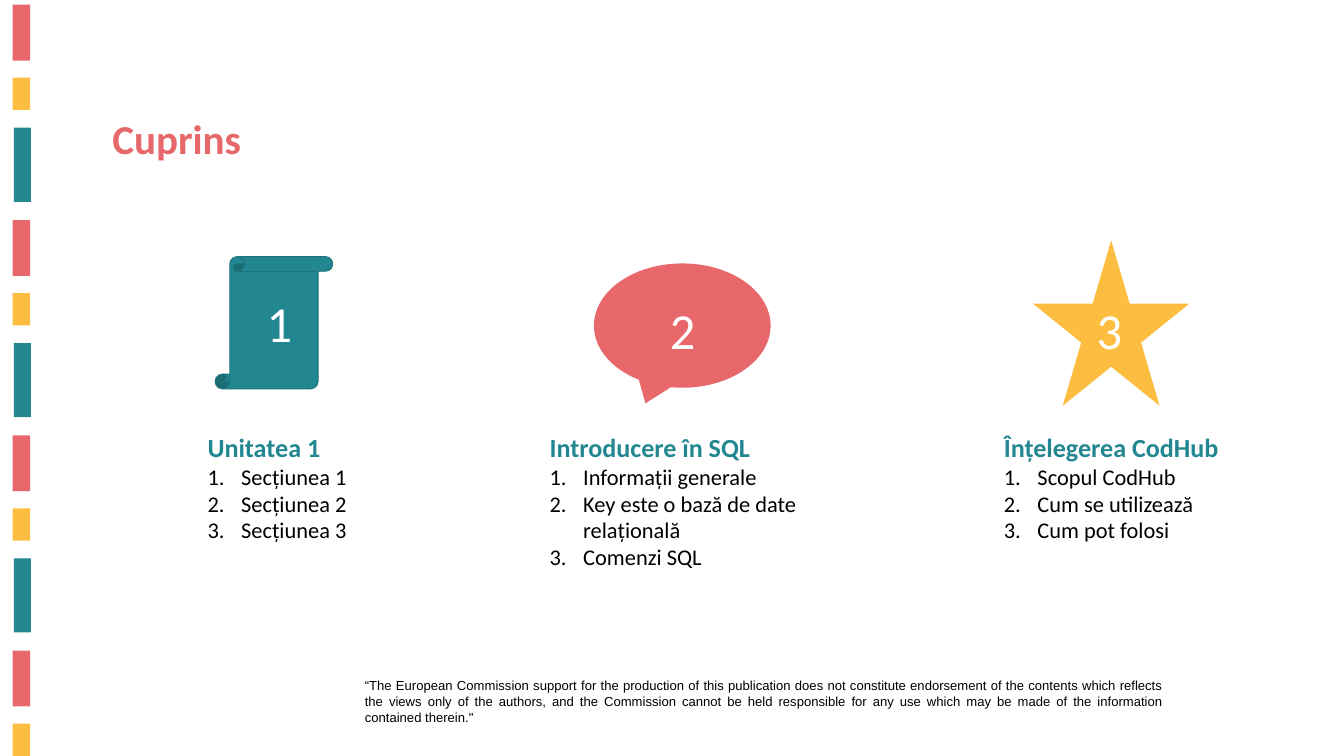
from lxml.etree import SubElement
from pptx import Presentation
from pptx.dml.color import RGBColor
from pptx.enum.shapes import MSO_SHAPE as Kind
from pptx.enum.text import MSO_ANCHOR as Anchor, MSO_AUTO_SIZE as Fit, PP_ALIGN as Align
from pptx.oxml.ns import qn
from pptx.util import Cm, Pt

HUES = {"teal": "238791", "red": "E8676A", "gold": "FDBD40", "edge": "1E737C",
        "title": "E7686A", "black": "000000", "white": "FFFFFF"}

TITLE = "Cuprins"
NOTE = ("“The European Commission support for the production of this publication does not "
        "constitute endorsement of the contents which reflects the views only of the authors, "
        "and the Commission cannot be held responsible for any use which may be made of the "
        "information contained therein.\"")
UNITS = [
    {"head": "Unitatea 1", "items": ["Secțiunea 1", "Secțiunea 2", "Secțiunea 3"],
     "list": (7.59, 16.18, 6.25, 5.74), "kind": Kind.VERTICAL_SCROLL, "hue": "teal",
     "icon": (8.13, 9.7, 4.45, 5), "digit": (9.83, 10.92, 4.01, 2.57)},
    {"head": "Introducere în SQL",
     "items": ["Informații generale", "Key este o bază de date relațională", "Comenzi SQL"],
     "list": (20.52, 16.18, 12.07, 5.56), "kind": Kind.OVAL_CALLOUT, "hue": "red",
     "icon": (22.45, 9.96, 6.68, 4.7), "digit": (25.07, 11.2, 2.74, 2.57)},
    {"head": "Înțelegerea CodHub",
     "items": ["Scopul CodHub", "Cum se utilizează", "Cum pot folosi"],
     "list": (37.69, 16.18, 9.86, 4.52), "kind": Kind.STAR_5_POINT, "hue": "gold",
     "icon": (39.04, 9.09, 5.92, 6.25), "digit": (41.2, 11.2, 3.81, 2.57)},
]
BARS = [("red", 0.48, 0.18, 0.66, 2.11), ("gold", 0.48, 2.94, 0.66, 1.22),
        ("teal", 0.53, 4.83, 0.64, 2.8)]
STEP, COUNT = 8.14, 11


def color(hue):
    """Return the named colour."""
    return RGBColor.from_string(HUES[hue])


def place(shape, box):
    """Move a placeholder and set up its text frame."""
    shape.left, shape.top, shape.width, shape.height = map(Cm, box)
    return setup(shape.text_frame)


def setup(frame):
    """Give a frame wrapped text that starts at its top."""
    frame.word_wrap = True
    frame.auto_size = Fit.NONE
    frame.vertical_anchor = Anchor.TOP
    return frame


def write(para, text, size, hue, bold=False, face="Calibri", align=Align.LEFT):
    """Fill and format one paragraph."""
    para.text = text
    para.alignment = align
    para.space_before = Pt(0)
    font = para.font
    font.name, font.size, font.bold = face, Pt(size), bold
    font.color.rgb = color(hue)


def mark(para, hang=0):
    """Number a hanging paragraph, or clear the bullet of a flush one."""
    props = para._p.get_or_add_pPr()
    props.set("marL", str(Cm(hang)))
    props.set("indent", str(-Cm(hang)))
    if hang:
        tint = SubElement(props, qn("a:buClr"))
        SubElement(tint, qn("a:srgbClr"), val=HUES["black"])
        SubElement(props, qn("a:buFont"), typeface="+mj-lt")
        SubElement(props, qn("a:buAutoNum"), type="arabicPeriod")
    else:
        SubElement(props, qn("a:buNone"))


def draw(slide, kind, box, hue, edge=None):
    """Add a flat filled shape."""
    shape = slide.shapes.add_shape(kind, *map(Cm, box))
    shape.shadow.inherit = False
    shape.fill.solid()
    shape.fill.fore_color.rgb = color(hue)
    if edge:
        shape.line.color.rgb = color(edge)
        shape.line.width = Pt(1)
    else:
        shape.line.fill.background()


def label(slide, box, *args, **look):
    """Add a text box of one paragraph."""
    frame = setup(slide.shapes.add_textbox(*map(Cm, box)).text_frame)
    write(frame.paragraphs[0], *args, **look)


def main():
    """Build the contents slide."""
    deck = Presentation()
    deck.slide_width, deck.slide_height = Cm(50.8), Cm(28.58)
    slide = deck.slides.add_slide(deck.slide_layouts.get_by_name("Comparison"))
    title, *bodies = slide.placeholders

    for i in range(COUNT):
        turn, part = divmod(i, len(BARS))
        hue, left, top, wide, high = BARS[part]
        draw(slide, Kind.RECTANGLE, (left, top + turn * STEP, wide, high), hue)

    label(slide, (13.54, 25.5, 30.68, 2.06), NOTE, 14, "black",
          face="Arial", align=Align.JUSTIFY)
    frame = place(title, (3.99, 4.17, 17.2, 2.13))
    write(frame.paragraphs[0], TITLE, 44, "title", bold=True)

    for num, (unit, body) in enumerate(zip(UNITS, bodies), 1):
        frame = place(body, unit["list"])
        head = frame.paragraphs[0]
        mark(head)
        write(head, unit["head"], 28, "teal", bold=True)
        for item in unit["items"]:
            para = frame.add_paragraph()
            mark(para, 1.27)
            write(para, item, 24, "black")
        edge = "edge" if unit["hue"] == "teal" else None
        draw(slide, unit["kind"], unit["icon"], unit["hue"], edge)
        label(slide, unit["digit"], str(num), 54, "white")

    for spare in bodies[len(UNITS):]:
        spare.element.getparent().remove(spare.element)
    deck.save("out.pptx")


if __name__ == "__main__":
    main()
